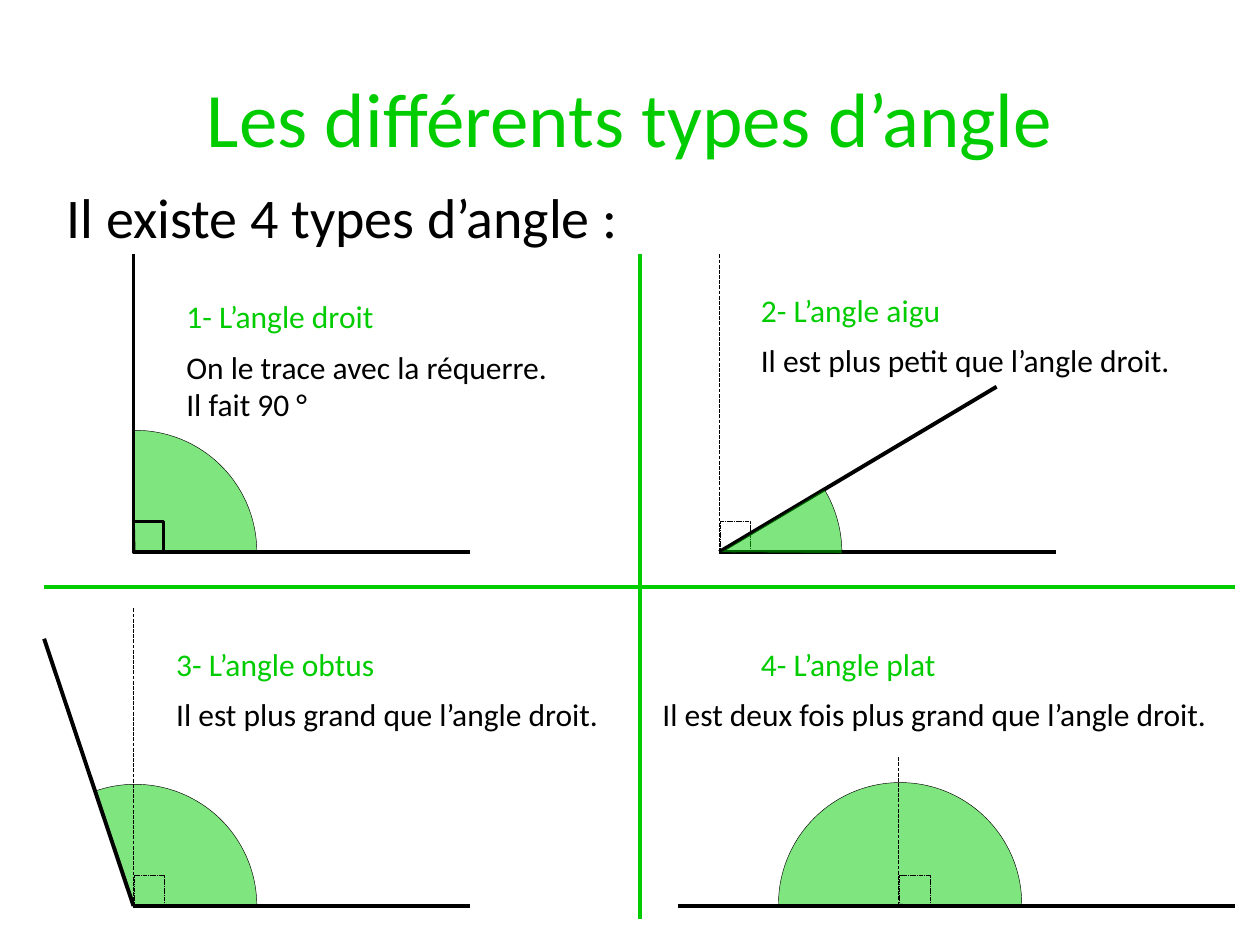
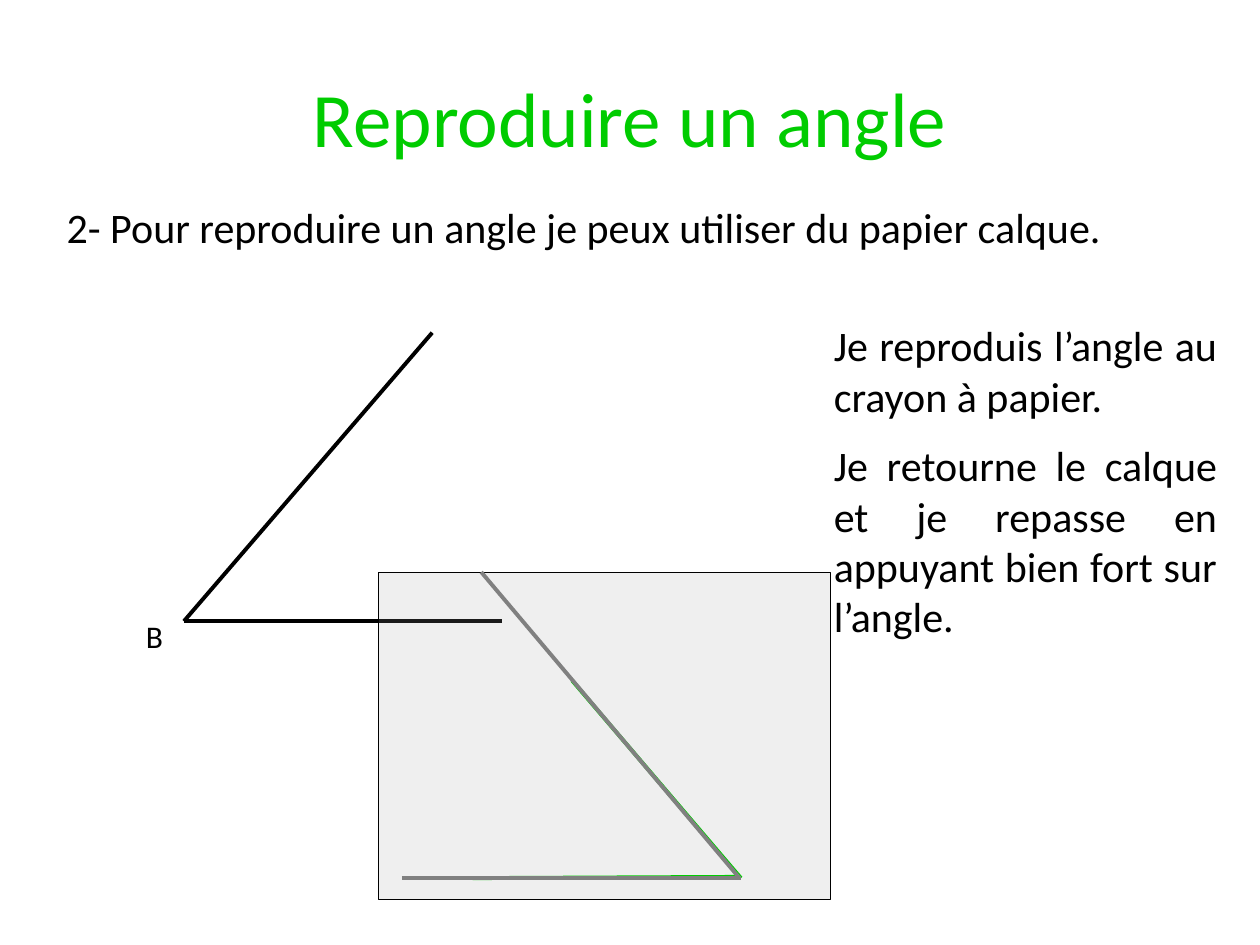
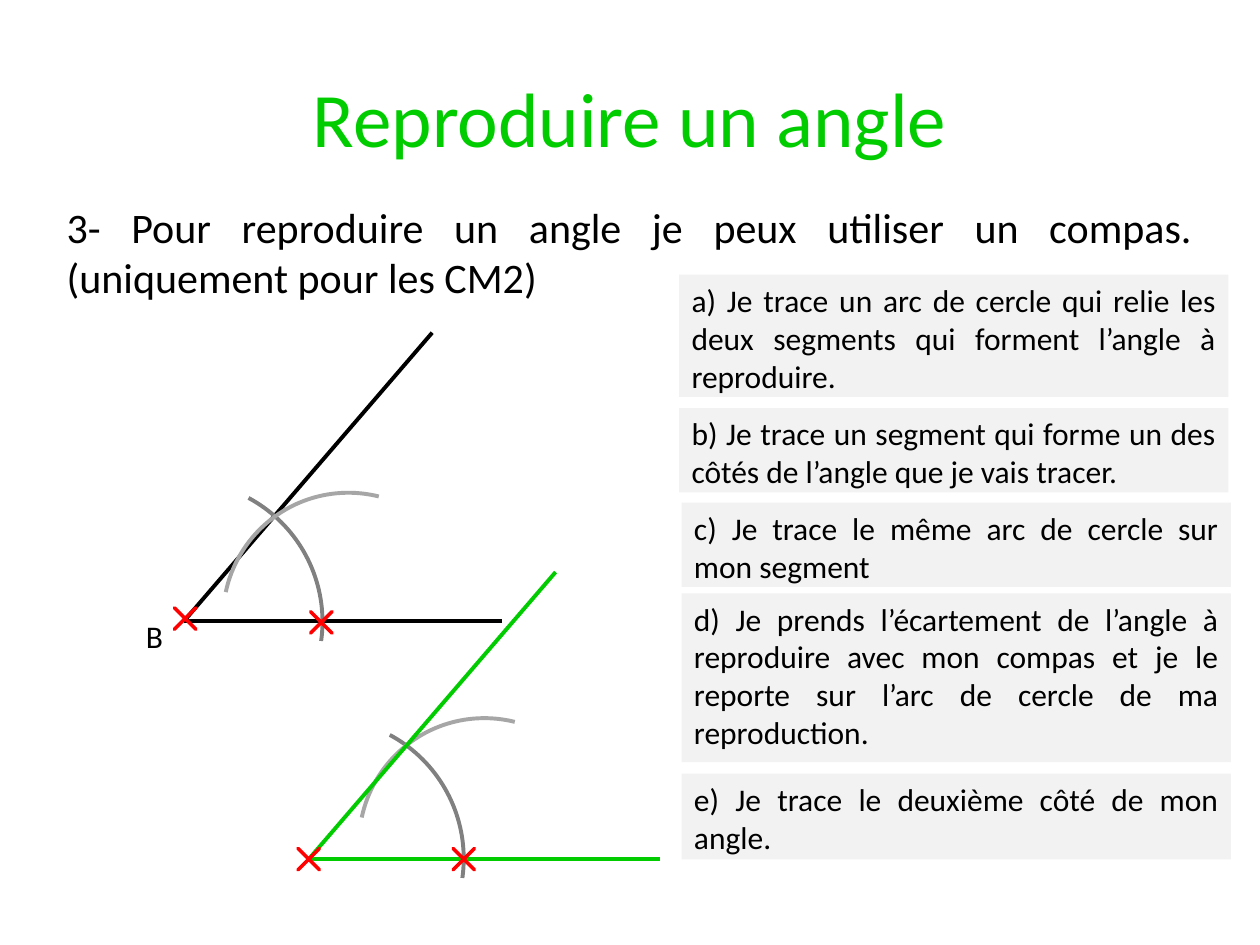
import lxml.etree
import pptx
import pptx.dml.color
import pptx.enum.dml
import pptx.enum.shapes
import pptx.enum.text
import pptx.oxml.ns
import pptx.util

Pt = pptx.util.Pt
SHAPE = pptx.enum.shapes.MSO_SHAPE
ALIGN = pptx.enum.text.PP_ALIGN
ANCHOR = pptx.enum.text.MSO_ANCHOR
DASH = pptx.enum.dml.MSO_LINE.SQUARE_DOT
qn = pptx.oxml.ns.qn

COLORS = {
    "green": "00CC00",
    "black": "000000",
    "pencil": "808080",
    "arc": "A6A6A6",
    "card": "F2F2F2",
    "red": "FF0000",
}
MARK = 17.3   # side of right-angle marks and point crosses
STROKE = 2.25


class Lesson:
    """Holds the shared style and the slide being drawn."""

    def __init__(self):
        self.deck = pptx.Presentation()
        self.deck.slide_width, self.deck.slide_height = Pt(720), Pt(540)
        self.shapes = None

    def color(self, name):
        return pptx.dml.color.RGBColor.from_string(COLORS[name])

    def page(self, title):
        self.shapes = self.deck.slides.add_slide(self.deck.slide_layouts[6]).shapes
        self.text(title, 36, 21.6, 648, 90, size=44, color="green",
                  align=ALIGN.CENTER, anchor=ANCHOR.MIDDLE)

    def text(self, words, left, top, width, height, **style):
        box = self.shapes.add_textbox(Pt(left), Pt(top), Pt(width), Pt(height))
        self.fill_text(box.text_frame, words, **style)

    def fill_text(self, frame, words, size=18, color="black", align=ALIGN.LEFT,
                  anchor=ANCHOR.TOP):
        frame.word_wrap = True
        frame.vertical_anchor = anchor
        frame.text = words
        font_format = {"name": "Calibri", "size": Pt(size)}
        for paragraph in frame.paragraphs:
            paragraph.alignment = align
            for run in paragraph.runs:
                for key, value in font_format.items():
                    setattr(run.font, key, value)
                run.font.color.rgb = self.color(color)

    def stroke(self, line, color, width, dash=None):
        line.color.rgb = self.color(color)
        for key, value in {"width": Pt(width), "dash_style": dash}.items():
            setattr(line, key, value)

    def line(self, start, end, color="black", width=STROKE, dash=None):
        segment = self.shapes.add_connector(
            pptx.enum.shapes.MSO_CONNECTOR.STRAIGHT, *map(Pt, (*start, *end)))
        self.stroke(segment.line, color, width, dash)
        lxml.etree.SubElement(segment.element.spPr, qn("a:effectLst"))

    def shape(self, kind, left, top, width, height, fill=None, opacity=100,
              outline=None, adjust=()):
        """Draw a preset shape; outline is (color, width[, dash])."""
        shape = self.shapes.add_shape(kind, *map(Pt, (left, top, width, height)))
        shape.shadow.inherit = False
        for index, value in enumerate(adjust):
            shape.adjustments[index] = value
        if fill:
            shape.fill.solid()
            shape.fill.fore_color.rgb = self.color(fill)
            if opacity < 100:
                tint = shape.element.spPr.find(".//" + qn("a:srgbClr"))
                lxml.etree.SubElement(tint, qn("a:alpha"), val=str(opacity * 1000))
        else:
            shape.fill.background()
        if outline:
            self.stroke(shape.line, *outline)
        else:
            shape.line.fill.background()
        return shape

    def round_part(self, kind, center, radius, start, end, **style):
        """Draw a pie or an arc from start to end, in degrees clockwise."""
        x, y = center
        # The adjustment unit is 100000, a degree is 60000
        self.shape(kind, x - radius, y - radius, 2 * radius, 2 * radius,
                   adjust=(start * 0.6, end * 0.6), **style)

    def sector(self, center, start, end):
        self.round_part(SHAPE.PIE, center, 69.5, start, end, fill="green",
                        opacity=50, outline=("black", 0.25))

    def compass_arc(self, center, radius, start, end, color):
        self.round_part(SHAPE.ARC, center, radius, start, end,
                        outline=(color, STROKE))

    def right_mark(self, left, base, width=0.25, dash=DASH):
        self.shape(SHAPE.RECTANGLE, left, base - MARK, MARK, MARK,
                   outline=("black", width, dash))

    def cross(self, x, y):
        point = self.shape(SHAPE.CROSS, x - MARK / 2, y - MARK / 2, MARK, MARK,
                           outline=("red", 2), adjust=(0.5,))
        point.rotation = 45

    def card(self, words, left, top, height):
        card = self.shape(SHAPE.RECTANGLE, left, top, 313.9, height, fill="card")
        self.fill_text(card.text_frame, words, align=ALIGN.JUSTIFY)

    def angle_b(self):
        """Draw the angle that the pupil has to reproduce."""
        for end in ((286.6, 355), (247, 190.1)):
            self.line((105.1, 355), end)
        self.text("B", 76.3, 349.2, 28.1, 28.8)


def draw_types(lesson):
    lesson.page("Les différents types d’angle")
    left_x, right_x, flat_x = 76.3, 411.1, 513.6
    upper_y, lower_y = 315.4, 517.7
    side, base = 170, 192.2

    lesson.sector((flat_x + 0.8, lower_y - 1), 178.64, 1.07)
    lesson.sector((left_x + 1, lower_y), 250.55, 359.36)
    lesson.sector((left_x + 1, upper_y), 268.87, 0.46)
    lesson.text("Il existe 4 types d’angle :", 31, 100.7, 648, 47.5, size=32,
                align=ALIGN.JUSTIFY)
    lesson.line((365.8, 145.4), (365.8, 524.9), "green")
    lesson.line((25.2, 335.5), (705.6, 335.5), "green")

    for x, y, length in ((left_x, upper_y, base), (right_x, upper_y, base),
                         (left_x, lower_y, base), (flat_x, lower_y, 192)):
        lesson.line((x + length, y), (x, y))
    lesson.line((387.4, lower_y), (521.3, lower_y))
    lesson.line((left_x, upper_y - side), (left_x, upper_y))
    lesson.line((569.5, 221), (right_x, upper_y))
    lesson.line((25.2, 365), (left_x, lower_y))
    for x, y, height in ((right_x, upper_y, side), (left_x, lower_y, side),
                         (flat_x, lower_y, 85)):
        lesson.line((x, y - height), (x, y), width=0.75, dash=DASH)

    lesson.right_mark(left_x, upper_y, width=2, dash=None)
    for x, y in ((right_x, upper_y), (left_x, lower_y), (flat_x, lower_y)):
        lesson.right_mark(x + 0.5, y)

    kinds = (
        ("1- L’angle droit", 99.4, 166.3,
         "On le trace avec la réquerre.\nIl fait 90 °", 99.4, 230),
        ("2- L’angle aigu", 427.7, 162.7,
         "Il est plus petit que l’angle droit.", 427.7, 258),
        ("3- L’angle obtus", 93.6, 365,
         "Il est plus grand que l’angle droit.", 93.6, 258),
        ("4- L’angle plat", 427.7, 365,
         "Il est deux fois plus grand que l’angle droit.", 371.5, 335),
    )
    for name, name_left, top, meaning, meaning_left, width in kinds:
        lesson.text(name, name_left, top, 204, 28.8, color="green")
        lesson.text(meaning, meaning_left, top + 28.8, width,
                    28.8 + 22 * meaning.count("\n"))
    lesson.sector((right_x + 0.5, upper_y + 0.3), 328.99, 0.41)


def draw_method(lesson, method):
    lesson.page("Reproduire un angle")
    lesson.text(method, 31, 111.6, 657.4, 67.7, size=24, align=ALIGN.JUSTIFY)
    lesson.angle_b()


def draw_tracing_paper(lesson):
    draw_method(lesson, "2- Pour reproduire un angle je peux utiliser du papier calque.")
    lesson.shape(SHAPE.RECTANGLE, 216, 326.9, 258.5, 187.2, fill="arc", opacity=17,
                 outline=("black", 0.5))
    lesson.line((423.4, 501.8), (326.9, 388.8), "green")
    lesson.line((422.6, 501.1), (270, 501.8), "green")
    steps = (
        ("Je reproduis l’angle au crayon à papier.", 179.3, 67.7),
        ("Je retourne le calque et je repasse en appuyant bien fort sur l’angle.",
         247.7, 131),
    )
    for words, top, height in steps:
        lesson.text(words, 469.4, top, 233.3, height, size=24, align=ALIGN.JUSTIFY)
    lesson.line((275, 326.9), (422.6, 501.8), "pencil")
    lesson.line((229.7, 501.8), (423.4, 501.8), "pencil")


def draw_compass(lesson):
    draw_method(lesson, "3- Pour reproduire un angle je peux utiliser un compas. "
                        "(uniquement pour les CM2)")
    steps = (
        ("a) Je trace un arc de cercle qui relie les deux segments qui forment "
         "l’angle à reproduire.", 388.1, 157, 69.8),
        ("b) Je trace un segment qui forme un des côtés de l’angle que je vais "
         "tracer.", 388.1, 233.3, 48.2),
        ("c) Je trace le même arc de cercle sur mon segment", 389.5, 287.3, 48.2),
        ("d) Je prends l’écartement de l’angle à reproduire avec mon compas et je "
         "le reporte sur l’arc de cercle de ma reproduction.", 389.5, 339.1, 96.5),
        ("e) Je trace le deuxième côté de mon angle.", 389.5, 442.1, 49),
    )
    for step in steps:
        lesson.card(*step)
    vertex = (176.4, 491)
    lesson.line(vertex, (377.3, 491), "green")
    for center in ((104, 355.3), (184.7, 490.7)):
        lesson.compass_arc(center, 80.3, 298.28, 7.9, "pencil")
    for center in ((199.1, 353.2), (276.8, 482)):
        lesson.compass_arc(center, 71.6, 191.94, 284.06, "arc")
    lesson.line(vertex, (317.5, 326.9), "green")
    for point in ((105.8, 353.5), (183.6, 355.7), vertex, (265, 491)):
        lesson.cross(*point)


def main():
    lesson = Lesson()
    draw_types(lesson)
    draw_tracing_paper(lesson)
    draw_compass(lesson)
    lesson.deck.save("out.pptx")


if __name__ == "__main__":
    main()
